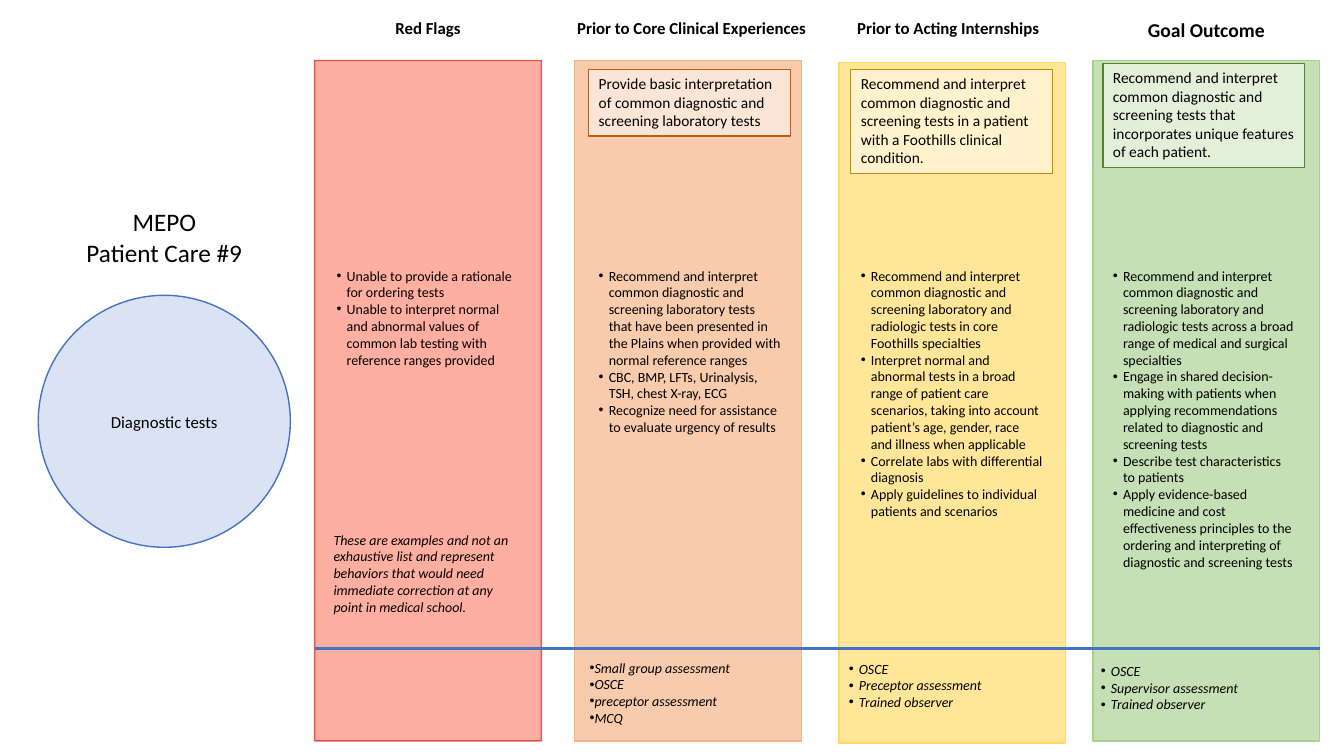
"""Build the diagnostic tests milestone slide for MEPO Patient Care #9."""
import dataclasses
import typing

import lxml.etree
import pptx
import pptx.dml.color
import pptx.enum.shapes
import pptx.enum.text
import pptx.oxml.ns
import pptx.util

PX = 9144
BAR_W, BAR_H = 225, 675
CARD_W = 200
LIST_Y = 260
DIVIDER_Y = 643
COLORS = {
    "text": "000000", "blue": "4472C4", "circle": "DAE3F3",
    "red": "FF2600", "red_line": "C00000",
    "orange": "F8CBAD", "orange_line": "F4B183", "orange_card": "FBE5D6", "orange_edge": "C55A11",
    "yellow": "FFE699", "yellow_line": "FFD966", "yellow_card": "FFF2CC", "yellow_edge": "BF9000",
    "green": "C5E0B4", "green_line": "A9D18E", "green_card": "E2F0D9", "green_edge": "548235",
}
SHAPE = pptx.enum.shapes.MSO_SHAPE
ALIGN = pptx.enum.text.PP_ALIGN
ANCHOR = pptx.enum.text.MSO_ANCHOR
AUTO = pptx.enum.text.MSO_AUTO_SIZE


@dataclasses.dataclass(frozen=True)
class Box:
    x: int
    y: int
    w: int
    h: int


@dataclasses.dataclass(frozen=True)
class Block:
    box: Box
    text: str
    indent: int = 10


@dataclasses.dataclass(frozen=True)
class Column:
    x: int
    y: int
    color: str
    heading: Block
    behaviors: Block
    card: typing.Optional[Block] = None
    assessments: typing.Optional[Block] = None
    heading_size: int = 12
    fill_alpha: int = 100
    line_alpha: int = 100


COLUMNS = [
    Column(
        312, 60, "red",
        Block(Box(312, 13, BAR_W, 30), "Red Flags"),
        Block(Box(324, LIST_Y, CARD_W, 128),
              "Unable to provide a rationale for ordering tests\n"
              "Unable to interpret normal and abnormal values of common lab testing "
              "with reference ranges provided"),
        fill_alpha=37, line_alpha=59,
    ),
    Column(
        570, 60, "orange",
        Block(Box(560, 13, 252, 30), "Prior to Core Clinical Experiences"),
        Block(Box(584, LIST_Y, CARD_W, 195),
              "Recommend and interpret common diagnostic and screening laboratory "
              "tests that have been presented in the Plains when provided with normal "
              "reference ranges\n"
              "CBC, BMP, LFTs, Urinalysis, TSH, chest X-ray, ECG\n"
              "Recognize need for assistance to evaluate urgency of results"),
        Block(Box(584, 69, CARD_W, 66),
              "Provide basic interpretation of common diagnostic and screening laboratory tests"),
        Block(Box(575, 649, 209, 77),
              "Small group assessment\nOSCE\npreceptor assessment\nMCQ", indent=0),
    ),
    Column(
        832, 62, "yellow",
        Block(Box(828, 13, BAR_W, 30), "Prior to Acting Internships"),
        Block(Box(844, LIST_Y, CARD_W, 263),
              "Recommend and interpret common diagnostic and screening laboratory "
              "and radiologic tests in core Foothills specialties\n"
              "Interpret normal and abnormal tests in a broad range of patient care scenarios, "
              "taking into account patient’s age, gender, race and illness when applicable\n"
              "Correlate labs with differential diagnosis\n"
              "Apply guidelines to individual patients and scenarios"),
        Block(Box(844, 69, CARD_W, 103),
              "Recommend and interpret common diagnostic and screening tests in a patient "
              "with a Foothills clinical condition."),
        Block(Box(832, 650, 161, 77), "OSCE\nPreceptor assessment\nTrained observer"),
    ),
    Column(
        1084, 60, "green",
        Block(Box(1084, 13, BAR_W, 34), "Goal Outcome"),
        Block(Box(1094, LIST_Y, CARD_W, 313),
              "Recommend and interpret common diagnostic and screening laboratory "
              "and radiologic tests across a broad range of medical and surgical specialties\n"
              "Engage in shared decision-making with patients when applying recommendations "
              "related to diagnostic and screening tests\n"
              "Describe test characteristics to patients\n"
              "Apply evidence-based medicine and cost effectiveness principles to the ordering "
              "and interpreting of diagnostic and screening tests"),
        Block(Box(1094, 63, CARD_W, 103),
              "Recommend and interpret common diagnostic and screening tests that incorporates "
              "unique features of each patient."),
        Block(Box(1082, 652, 161, 61), "OSCE\nSupervisor assessment\nTrained observer"),
        heading_size=14,
    ),
]


def rgb(name: str) -> pptx.dml.color.RGBColor:
    return pptx.dml.color.RGBColor.from_string(COLORS[name])


def emu(box: Box) -> list[int]:
    return [v * PX for v in dataclasses.astuple(box)]


def write(sp, text: str, *, size: int = 10, bold: bool = False, italic: bool = False,
          align=ALIGN.LEFT, anchor=ANCHOR.TOP, auto=AUTO.SHAPE_TO_FIT_TEXT,
          indent: typing.Optional[int] = None) -> None:
    tf = sp.text_frame
    tf.word_wrap = True
    tf.auto_size = auto
    tf.vertical_anchor = anchor
    for i, line in enumerate(text.split("\n")):
        p = tf.add_paragraph() if i else tf.paragraphs[0]
        p.alignment = align
        if indent is not None:
            pPr = p._p.get_or_add_pPr()
            pPr.set("marL", str(indent * PX))
            pPr.set("indent", str(-indent * PX))
            for tag, key, value in (("a:buFont", "typeface", "Arial"), ("a:buChar", "char", "•")):
                lxml.etree.SubElement(pPr, pptx.oxml.ns.qn(tag)).set(key, value)
        r = p.add_run()
        r.text = line
        r.font.name = "Calibri"
        r.font.size = pptx.util.Pt(size)
        r.font.bold = bold
        r.font.italic = italic
        r.font.color.rgb = rgb("text")


def add_text(s, block: Block, **fmt) -> None:
    write(s.shapes.add_textbox(*emu(block.box)), block.text, **fmt)


def add_shape(s, kind, box: Box, fill: str, line: str, width: float = 1,
              fill_alpha: int = 100, line_alpha: int = 100):
    sp = s.shapes.add_shape(kind, *emu(box))
    sp.shadow.inherit = False
    sp.fill.solid()
    sp.fill.fore_color.rgb = rgb(fill)
    sp.line.color.rgb = rgb(line)
    sp.line.width = pptx.util.Pt(width)
    for prefix, alpha in (("", fill_alpha), ("a:ln/", line_alpha)):
        if alpha < 100:
            clr = sp._element.spPr.find(f"{prefix}a:solidFill/a:srgbClr", pptx.oxml.ns._nsmap)
            lxml.etree.SubElement(clr, pptx.oxml.ns.qn("a:alpha")).set("val", str(alpha * 1000))
    return sp


def add_divider(s) -> None:
    end_x = COLUMNS[-1].x + BAR_W
    line = s.shapes.add_connector(pptx.enum.shapes.MSO_CONNECTOR.STRAIGHT, COLUMNS[0].x * PX,
                                  DIVIDER_Y * PX, end_x * PX, DIVIDER_Y * PX)
    line.line.color.rgb = rgb("blue")
    line.line.width = pptx.util.Pt(2.25)
    lxml.etree.SubElement(line._element.spPr, pptx.oxml.ns.qn("a:effectLst"))


def add_column_text(s, col: Column) -> None:
    add_text(s, col.heading, size=col.heading_size, bold=True, align=ALIGN.CENTER)
    add_text(s, col.behaviors, indent=col.behaviors.indent)
    if col.card:
        sp = add_shape(s, SHAPE.RECTANGLE, col.card.box, f"{col.color}_card",
                       f"{col.color}_edge", 0.75)
        write(sp, col.card.text, size=11)
    if col.assessments:
        add_text(s, col.assessments, italic=True, indent=col.assessments.indent)


def main() -> None:
    prs = pptx.Presentation()
    prs.slide_width, prs.slide_height = 1333 * PX, 750 * PX
    s = prs.slides.add_slide(prs.slide_layouts[6])
    circle = add_shape(s, SHAPE.OVAL, Box(38, 293, 250, 250), "circle", "blue")
    write(circle, "Diagnostic tests", size=12, align=ALIGN.CENTER, anchor=ANCHOR.MIDDLE,
          auto=AUTO.NONE)
    add_text(s, Block(Box(48, 200, 230, 71), "MEPO\nPatient Care #9"), size=18, align=ALIGN.CENTER)
    for col in COLUMNS:
        add_shape(s, SHAPE.RECTANGLE, Box(col.x, col.y, BAR_W, BAR_H), col.color,
                  f"{col.color}_line", 1, col.fill_alpha, col.line_alpha)
    add_divider(s)
    for col in COLUMNS:
        add_column_text(s, col)
    add_text(s, Block(Box(321, 522, CARD_W, 111),
                      "These are examples and not an exhaustive list and represent behaviors that "
                      "would need immediate correction at any point in medical school."), italic=True)
    prs.save("out.pptx")


if __name__ == "__main__":
    main()
